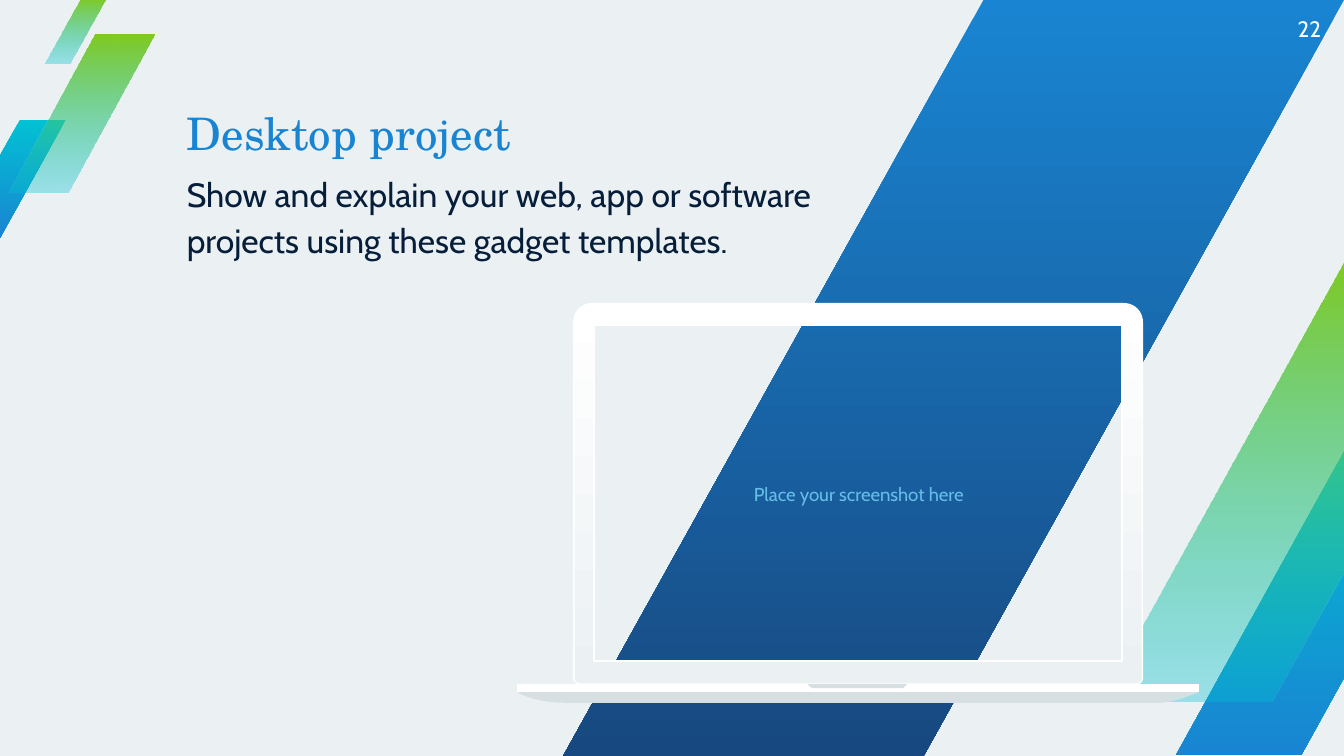
from lxml.etree import SubElement
from pptx import Presentation
from pptx.dml.color import RGBColor
from pptx.enum.shapes import MSO_SHAPE as Preset
from pptx.enum.text import MSO_ANCHOR as Anchor, MSO_AUTO_SIZE as AutoSize, PP_ALIGN as Align
from pptx.oxml.ns import qn
from pptx.util import Inches, Pt

COLUMNS = 100
BLUE, NAVY, INK, SKY = "1985D2", "184880", "061E3A", "66BDE8"
TEAL, GREEN, WHITE, MIST, GREY = "02C1D3", "7FCA20", "FFFFFF", "EBF0F3", "D8DFE3"
SERIF, SANS = "TeX Gyre Schola", "Cabin"


def rgb(color):
    return RGBColor.from_string(color)


def curve(start, first, second, end, steps=10):
    for step in range(1, steps + 1):
        t = step / steps
        weights = ((1 - t) ** 3, 3 * t * (1 - t) ** 2, 3 * t * t * (1 - t), t ** 3)
        yield tuple(
            sum(w * p[axis] for w, p in zip(weights, (start, first, second, end)))
            for axis in (0, 1)
        )


def trace(start, *segments):
    points = [start]
    for segment in segments:
        if len(segment) == 3:
            points.extend(curve(points[-1], *segment))
        else:
            points.extend(segment)
    return points


class Deck:
    def __init__(self):
        self.prs = Presentation()
        self.prs.slide_width = Inches(10)
        self.prs.slide_height = self.prs.slide_width * 9 // 16
        self.cell = self.prs.slide_width // COLUMNS
        self.slide = self.prs.slides.add_slide(self.prs.slide_layouts[5])
        self.slide.background.fill.solid()
        self.slide.background.fill.fore_color.rgb = rgb(MIST)

    def grid(self, *cells):
        return [round(count * self.cell) for count in cells]

    def gradient(self, shape, top, bottom, opacity=100):
        shape.fill.gradient()
        shape.fill.gradient_angle = 270
        for stop, color in zip(shape.fill.gradient_stops, (top, bottom)):
            stop.color.rgb = rgb(color)
        if opacity < 100:
            last_color = shape._element.spPr.findall(".//" + qn("a:srgbClr"))[-1]
            SubElement(last_color, qn("a:alpha"), val=str(opacity * 1000))

    def stripe(self, box, top, bottom, opacity=100, slant=0.59):
        shape = self.slide.shapes.add_shape(Preset.PARALLELOGRAM, *self.grid(*box))
        shape.adjustments[0] = slant
        shape.shadow.inherit = False
        shape.line.fill.background()
        self.gradient(shape, top, bottom, opacity)

    def outline(self, *contours, fill=None, fade=None, border=None):
        first, *others = [[self.grid(*point) for point in c] for c in contours]
        builder = self.slide.shapes.build_freeform(*first[0], scale=1.0)
        builder.add_line_segments(first[1:], close=True)
        for contour in others:
            builder.move_to(*contour[0])
            builder.add_line_segments(contour[1:], close=True)
        shape = builder.convert_to_shape()
        shape.shadow.inherit = False
        if fade:
            self.gradient(shape, *fade)
        else:
            shape.fill.solid()
            shape.fill.fore_color.rgb = rgb(fill)
        if border:
            shape.line.color.rgb = rgb(border)
            shape.line.width = Pt(0.75)
        else:
            shape.line.fill.background()

    def set_text(self, shape, box, text, size, color, font=SANS, align=Align.LEFT,
                 anchor=Anchor.TOP, inset=0, spacing=1.0, before=0):
        shape.left, shape.top, shape.width, shape.height = self.grid(*box)
        frame = shape.text_frame
        frame.text = text
        frame.word_wrap = True
        frame.auto_size = AutoSize.NONE
        frame.vertical_anchor = anchor
        frame.margin_left, frame.margin_top, frame.margin_right, frame.margin_bottom = (
            self.grid(inset) * 4)
        paragraph = frame.paragraphs[0]
        paragraph.alignment = align
        paragraph.line_spacing = spacing
        paragraph.space_before = Pt(before)
        paragraph.font.name = font
        paragraph.font.size = Pt(size)
        paragraph.font.color.rgb = rgb(color)

    def title(self, box, text, **style):
        self.set_text(self.slide.shapes.title, box, text, **style)

    def label(self, box, text, **style):
        self.set_text(self.slide.shapes.add_textbox(0, 0, 0, 0), box, text, **style)

    def save(self):
        self.prs.save("out.pptx")


def draw_laptop(deck):
    lid = trace(
        (83.6, 22.6), [(44.1, 22.6)],
        [(43.3, 22.6), (42.7, 23.2), (42.7, 24)], [(42.7, 50.5)],
        [(42.7, 50.7), (42.9, 50.9), (43.2, 50.9)], [(84.5, 50.9)],
        [(84.8, 50.9), (85, 50.7), (85, 50.5)], [(85, 24)],
        [(85, 23.2), (84.4, 22.6), (83.6, 22.6)],
    )
    screen = [(83.5, 49.2), (44.2, 49.2), (44.2, 24.2), (83.5, 24.2)]
    underside = trace(
        (38.5, 51.5), [(38.5, 51.5), (39.6, 52.3), (42.2, 52.3)], [(86.3, 52.3)],
        [(87.3, 52.3), (89.2, 51.5), (89.2, 51.5)],
    )
    base = [(38.5, 51.5), (89.2, 51.5), (89.2, 50.9), (38.5, 50.9)]
    notch = trace(
        (60.1, 50.9), [(60.1, 50.9), (60.3, 51.2), (60.5, 51.2)], [(67.1, 51.2)],
        [(67.3, 51.2), (67.5, 50.9), (67.5, 50.9)],
    )
    deck.outline(lid, screen, fade=(WHITE, MIST), border=WHITE)
    for part, color in ((underside, GREY), (base, WHITE), (notch, GREY)):
        deck.outline(part, fill=color)


def main():
    deck = Deck()
    deck.stripe((-3.4, 8.9, 8.3, 8.8), TEAL, BLUE)
    deck.stripe((0.6, 2.6, 10.9, 11.7), GREEN, TEAL, opacity=34)
    deck.stripe((3.3, -0.2, 4.6, 4.9), GREEN, TEAL, opacity=34)
    deck.stripe((87.5, 32, 22.7, 24.2), TEAL, BLUE)
    deck.stripe((81.9, 19.2, 31, 33), GREEN, TEAL, opacity=34)
    deck.stripe((41.9, 0, 58.1, 56.25), BLUE, NAVY, slant=0.556)

    deck.title((13.9, 7.3, 51.4, 5.2), "Desktop project",
               size=24, color=BLUE, font=SERIF, spacing=1.15, before=6)
    deck.label((13.9, 12.5, 51.4, 8.3),
               "Show and explain your web, app or software projects using these gadget templates.",
               size=18, color=INK, spacing=1.15, before=6)
    deck.label((44.2, 24.2, 39.4, 25.1), "Place your screenshot here",
               size=10, color=SKY, align=Align.CENTER, anchor=Anchor.MIDDLE, inset=1)
    deck.label((93.6, 0, 4.7, 4.3), "22",
               size=12, color=WHITE, align=Align.RIGHT, anchor=Anchor.MIDDLE)
    draw_laptop(deck)
    deck.save()


if __name__ == "__main__":
    main()
